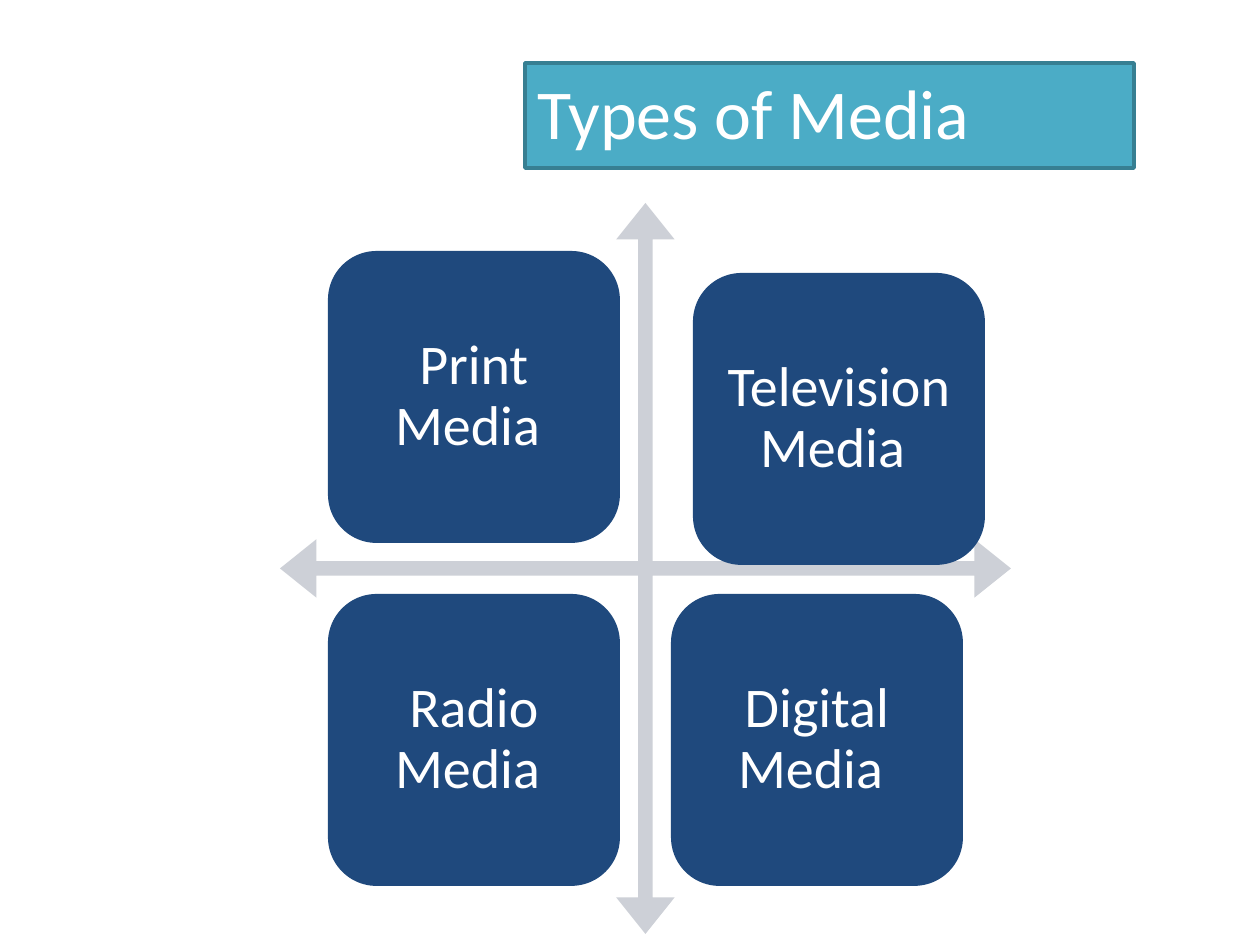
from dataclasses import dataclass

from pptx import Presentation
from pptx.dml.color import RGBColor as Color
from pptx.enum.shapes import MSO_SHAPE as Shape
from pptx.enum.text import MSO_ANCHOR as Anchor, MSO_AUTO_SIZE as AutoSize, PP_ALIGN as Align
from pptx.util import Emu, Pt

PX_PER_INCH = 126


@dataclass(frozen=True)
class Theme:
    """Colours, font and type sizes of the slide."""
    font: str = "Calibri"
    text: Color = Color(0xFF, 0xFF, 0xFF)
    banner: Color = Color(0x4B, 0xAC, 0xC6)
    banner_edge: Color = Color(0x37, 0x7F, 0x92)
    tile: Color = Color(0x1F, 0x49, 0x7D)
    arrow: Color = Color(0xCD, 0xD0, 0xD7)
    title_size: int = 40
    tile_size: int = 32


@dataclass(frozen=True)
class Box:
    """A region of the slide in px."""
    left: int
    top: int
    width: int
    height: int

    def inner(self, left, top, width, height):
        """Return a box placed relative to this one."""
        return Box(self.left + left, self.top + top, width, height)

    def emu(self):
        """Return left, top, width and height in EMU."""
        return [px(side) for side in (self.left, self.top, self.width, self.height)]


THEME = Theme()


def px(length):
    """Turn px into EMU."""
    return Emu(round(length * 914400 / PX_PER_INCH))


def add_span(para, text, size):
    """Add one run in the theme font."""
    span = para.add_run()
    span.text = text
    span.font.name = THEME.font
    span.font.size = Pt(size)
    span.font.color.rgb = THEME.text


def add_plain_shape(page, kind, box, fill):
    """Add a filled shape without outline or shadow."""
    shape = page.shapes.add_shape(kind, *box.emu())
    shape.shadow.inherit = False
    shape.fill.solid()
    shape.fill.fore_color.rgb = fill
    shape.line.fill.background()
    return shape


def place_title(page, box, text):
    """Format the title placeholder as a banner."""
    title = page.shapes.title
    title.left, title.top, title.width, title.height = box.emu()
    title.fill.solid()
    title.fill.fore_color.rgb = THEME.banner
    title.line.color.rgb = THEME.banner_edge
    title.line.width = Pt(2)
    frame = title.text_frame
    frame.word_wrap = True
    frame.vertical_anchor = Anchor.TOP
    frame.auto_size = AutoSize.SHAPE_TO_FIT_TEXT
    para = frame.paragraphs[0]
    para.alignment = Align.LEFT
    add_span(para, text, THEME.title_size)


def place_tile(page, box, text):
    """Add one rounded tile with a centred label."""
    tile = add_plain_shape(page, Shape.ROUNDED_RECTANGLE, box, THEME.tile)
    frame = tile.text_frame
    frame.word_wrap = True
    frame.vertical_anchor = Anchor.MIDDLE
    frame.margin_left = frame.margin_right = px(16)
    frame.margin_top = frame.margin_bottom = px(16)
    para = frame.paragraphs[0]
    para.alignment = Align.CENTER
    para.line_spacing = 0.9
    add_span(para, text, THEME.tile_size)


def place_matrix(page, box, labels, nudges):
    """Add a four-way arrow and a two-by-two grid of tiles."""
    arrow = add_plain_shape(page, Shape.QUAD_ARROW, box, THEME.arrow)
    for index, ratio in enumerate((0.02, 0.04, 0.05)):
        arrow.adjustments[index] = ratio
    margin, side, pitch = 48, 292, 343
    for index, label in enumerate(labels):
        row, column = divmod(index, 2)
        nudge = nudges.get(label, 0)
        left = margin + column * pitch + nudge
        top = margin + row * pitch + nudge
        place_tile(page, box.inner(left, top, side, side), label)


def main():
    """Build and save the deck."""
    deck = Presentation()
    deck.slide_width, deck.slide_height = px(1260), px(945)
    page = deck.slides.add_slide(deck.slide_layouts[5])
    labels = ["Print Media ", "Television Media ", "Radio Media ", "Digital Media "]
    place_matrix(page, Box(280, 203, 731, 731), labels, {"Television Media ": 22})
    place_title(page, Box(525, 63, 609, 97), "Types of Media")
    deck.save("out.pptx")


if __name__ == "__main__":
    main()
